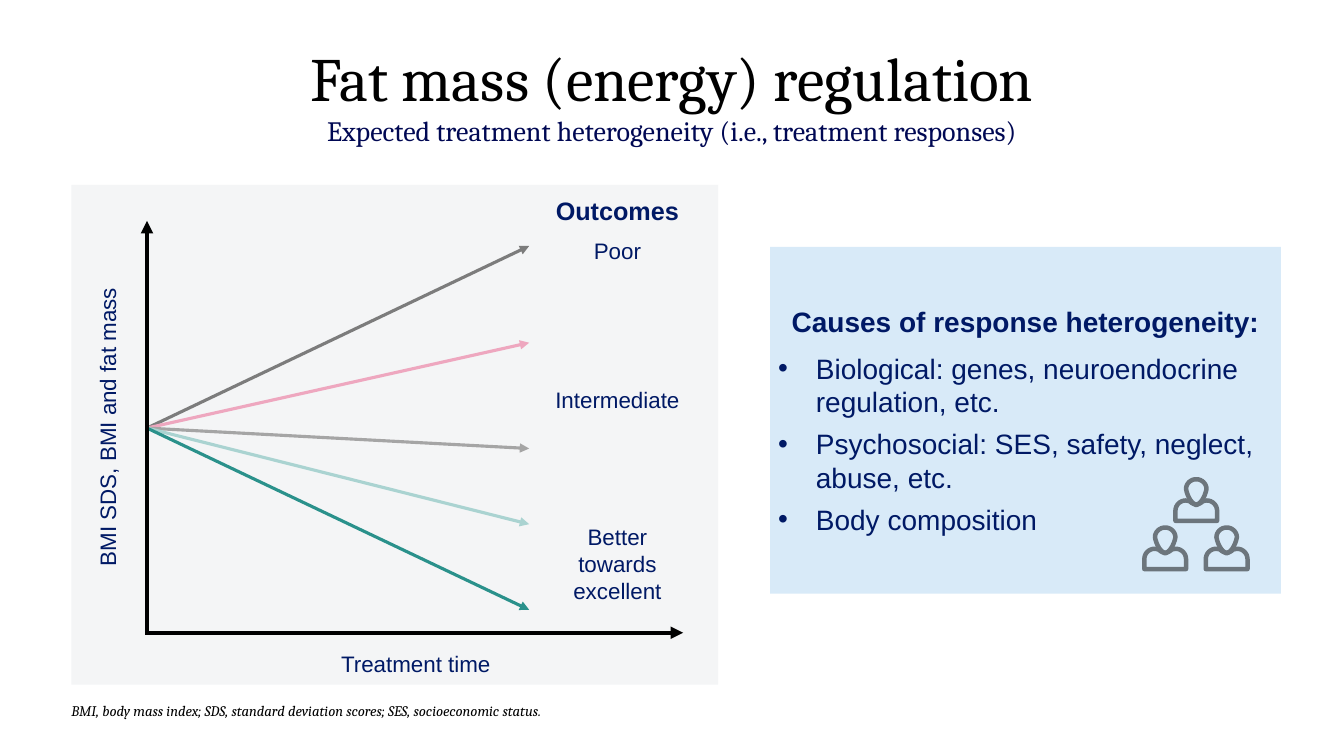
"""Builds the slide on expected treatment heterogeneity in fat mass regulation."""
from dataclasses import dataclass
from math import cos, pi, sin

from lxml.etree import SubElement
from pptx import Presentation
from pptx.dml.color import RGBColor
from pptx.enum.shapes import MSO_CONNECTOR as Connector, MSO_SHAPE as Preset
from pptx.enum.text import MSO_ANCHOR as Anchor, MSO_AUTO_SIZE as AutoSize, PP_ALIGN as Align
from pptx.oxml.ns import qn
from pptx.util import Pt


@dataclass(frozen=True)
class Theme:
    serif: str = "Cambria"
    sans: str = "Arial"
    black: str = "000000"
    subtitle: str = "000853"
    navy: str = "001965"
    chart_panel: str = "F4F5F6"
    causes_panel: str = "D8EAF8"
    icon: str = "6C757C"
    poor: str = "7C7C7C"
    fair: str = "EEA7BF"
    middle: str = "A5A5A5"
    good: str = "AAD3D1"
    excellent: str = "2A918B"
    title_size: float = 44
    list_size: float = 20
    heading_size: float = 18
    label_size: float = 16
    note_size: float = 10.5


theme = Theme()


def write(para, text, size, color=theme.navy, face=theme.sans, bold=False, italic=False):
    span = para.add_run()
    span.text = text
    span.font.size = Pt(size)
    span.font.name = face
    span.font.bold = bold
    span.font.italic = italic
    span.font.color.rgb = RGBColor.from_string(color)


def add_box(center_x, center_y, width, height):
    box = page.shapes.add_textbox(
        Pt(center_x - width / 2), Pt(center_y - height / 2), Pt(width), Pt(height))
    frame = box.text_frame
    frame.word_wrap = True
    frame.vertical_anchor = Anchor.MIDDLE
    frame.margin_left = frame.margin_right = frame.margin_top = frame.margin_bottom = 0
    frame.paragraphs[0].alignment = Align.CENTER
    return box


deck = Presentation()
deck.slide_width, deck.slide_height = Pt(960), Pt(540)
page = deck.slides.add_slide(deck.slide_layouts[1])

title = page.shapes.title
title.left, title.top, title.width, title.height = Pt(48), Pt(21.6), Pt(864), Pt(90)
title.text_frame.auto_size = AutoSize.NONE
title.text_frame.vertical_anchor = Anchor.MIDDLE
para = title.text_frame.paragraphs[0]
para.alignment = Align.CENTER
write(para, "Fat mass (energy) regulation", theme.title_size, theme.black, theme.serif)
para.add_line_break()
write(para, "Expected treatment heterogeneity (i.e., treatment responses)",
      theme.list_size, theme.subtitle, theme.serif)

causes = page.placeholders[1]
causes.left, causes.top, causes.width, causes.height = Pt(550), Pt(176.4), Pt(365), Pt(247.7)
causes.fill.solid()
causes.fill.fore_color.rgb = RGBColor.from_string(theme.causes_panel)
frame = causes.text_frame
frame.auto_size = AutoSize.NONE
frame.vertical_anchor = Anchor.MIDDLE
frame.margin_left = frame.margin_right = Pt(5.76)
frame.margin_top = frame.margin_bottom = Pt(2.88)
heading = frame.paragraphs[0]
heading.alignment = Align.CENTER
heading.space_before, heading.space_after = Pt(0), Pt(9)
properties = heading._p.get_or_add_pPr()
properties.set("marL", "0")
properties.set("indent", "0")
SubElement(properties, qn("a:buNone"))
write(heading, "Causes of response heterogeneity:", theme.list_size, bold=True)
for cause in ("Biological: genes, neuroendocrine regulation, etc.",
              "Psychosocial: SES, safety, neglect, abuse, etc.",
              "Body composition"):
    para = frame.add_paragraph()
    para.space_before, para.space_after = Pt(0), Pt(6)
    properties = para._p.get_or_add_pPr()
    properties.set("marL", str(Pt(27)))
    properties.set("indent", str(-Pt(27)))
    SubElement(properties, qn("a:buFont"), typeface=theme.sans)
    SubElement(properties, qn("a:buChar"), char="•")
    write(para, cause, theme.list_size)

panel = page.shapes.add_shape(Preset.RECTANGLE, Pt(51), Pt(132), Pt(462), Pt(357))
panel.shadow.inherit = False
panel.fill.solid()
panel.fill.fore_color.rgb = RGBColor.from_string(theme.chart_panel)
panel.line.fill.background()

axis_x, axis_y, start_y, end_x = 105, 452, 305.8, 378
arrows = [(axis_x, axis_y, 488, axis_y, theme.black, 3)]
arrows += [(axis_x, start_y, end_x, end_y, color, 2.25) for end_y, color in (
    (175.7, theme.poor), (244.8, theme.fair), (320.4, theme.middle),
    (374.4, theme.good), (435.6, theme.excellent))]
arrows.append((axis_x, axis_y + 1.5, axis_x, 157.7, theme.black, 3))
for from_x, from_y, to_x, to_y, color, width in arrows:
    arrow = page.shapes.add_connector(
        Connector.STRAIGHT, Pt(from_x), Pt(from_y), Pt(to_x), Pt(to_y))
    arrow.line.color.rgb = RGBColor.from_string(color)
    arrow.line.width = Pt(width)
    SubElement(arrow.line._get_or_add_ln(), qn("a:tailEnd"), type="triangle")
    SubElement(arrow._element.spPr, qn("a:effectLst"))

for text, center_y, height, size, bold in (
        ("Outcomes", 150.5, 24, theme.heading_size, True),
        ("Poor", 179, 20, theme.label_size, False),
        ("Intermediate", 285.5, 20, theme.label_size, False),
        ("Better towards excellent", 402.5, 58, theme.label_size, False)):
    outcome = add_box(441, center_y, 98, height)
    write(outcome.text_frame.paragraphs[0], text, size, bold=bold)

for text, center_x, center_y, turn in (
        ("Treatment time", 297, 474, 0),
        ("BMI SDS, BMI and fat mass", 76.5, 305, 270)):
    axis_label = add_box(center_x, center_y, 247, 21.6)
    axis_label.rotation = turn
    write(axis_label.text_frame.paragraphs[0], text, theme.label_size)

footnote = add_box(391.5, 501.5, 681, 25)
footnote.text_frame.vertical_anchor = Anchor.BOTTOM
para = footnote.text_frame.paragraphs[0]
para.alignment = Align.LEFT
write(para, "BMI, body mass index; SDS, standard deviation scores; SES, socioeconomic status.",
      theme.note_size, theme.black, theme.serif, italic=True)

person_width = 33
head = []
for step in range(32):
    angle = step * pi / 16
    drop = max(sin(angle), 0)
    head.append((16.5 + 7.3 * cos(angle) * (1 - 0.25 * drop),
                 8.7 + (7 + 4 * (drop > 0)) * sin(angle)))
shoulder = [(9 - 7.4 * cos(step * pi / 16), 24.3 - 7.4 * sin(step * pi / 16))
            for step in range(9)]
left_side = [(1.6, 31.4)] + shoulder + [(11.5, 17.3), (13.5, 18.8), (16.5, 20.2)]
body = left_side + [(person_width - x, y) for x, y in reversed(left_side[:-1])]
for left, top in ((838, 340.6), (859.7, 375.1), (815.8, 375.1)):
    for outline in (body, head):
        points = [(Pt(left + x), Pt(top + y)) for x, y in outline]
        builder = page.shapes.build_freeform(*points[0])
        builder.add_line_segments(points[1:], close=True)
        part = builder.convert_to_shape()
        part.shadow.inherit = False
        part.fill.background()
        part.line.color.rgb = RGBColor.from_string(theme.icon)
        part.line.width = Pt(3.2)

deck.save("out.pptx")
